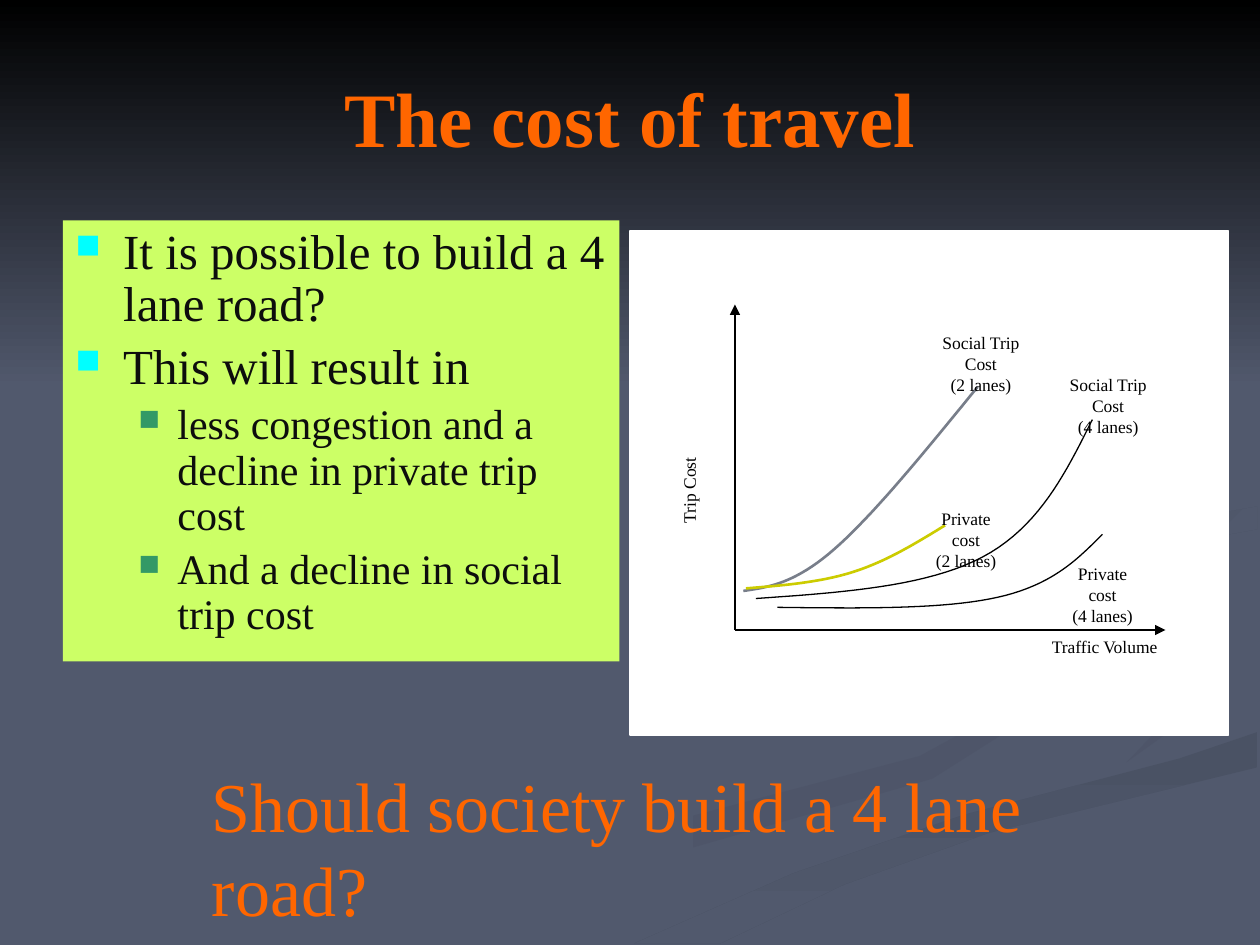
from lxml import etree
from pptx import Presentation
from pptx.dml.color import RGBColor
from pptx.enum.shapes import MSO_CONNECTOR, MSO_SHAPE
from pptx.enum.text import MSO_ANCHOR, PP_ALIGN
from pptx.oxml.ns import qn
from pptx.util import Inches, Pt

CENTER, LEFT = PP_ALIGN.CENTER, PP_ALIGN.LEFT
MIDDLE, TOP = MSO_ANCHOR.MIDDLE, MSO_ANCHOR.TOP
RECTANGLE, STRAIGHT = MSO_SHAPE.RECTANGLE, MSO_CONNECTOR.STRAIGHT
FONT = "Times New Roman"
COLORS = {name: RGBColor.from_string(value) for name, value in {
    "slate": "51596D", "dusk": "4E5569", "shade": "4A5264", "haze": "4D5467",
    "black": "000000", "white": "FFFFFF", "orange": "FF6600", "lime": "CCFF66",
    "ink": "0D0D0D", "cyan": "00FFFF", "green": "339966",
    "gray": "787E8A", "olive": "CCCC00"}.items()}

presentation = Presentation()
presentation.slide_width, presentation.slide_height = Inches(10), Inches(7.5)
COLUMN = presentation.slide_width / 10   # coarse grid of 10 by 7.5, for outlines
CELL = presentation.slide_width / 120    # fine grid of 120 by 90, for boxes
slide = presentation.slides.add_slide(presentation.slide_layouts[6])
slide.background.fill.solid()
slide.background.fill.fore_color.rgb = COLORS["slate"]


def add_outline(points, close):
    """Add a freeform through points given in coarse grid columns."""
    points = [(x * COLUMN, y * COLUMN) for x, y in points]
    builder = slide.shapes.build_freeform(*points[0])
    builder.add_line_segments(points[1:], close=close)
    shape = builder.convert_to_shape()
    shape.shadow.inherit = False
    return shape


def add_label(box, lines, size, color="black", align=LEFT, anchor=TOP, wrap=True):
    """Add a text box placed in fine grid cells, one paragraph per line."""
    shape = slide.shapes.add_textbox(*(round(n * CELL) for n in box))
    frame = shape.text_frame
    frame.word_wrap, frame.vertical_anchor = wrap, anchor
    frame.text = "\n".join(lines)
    for paragraph in frame.paragraphs:
        paragraph.alignment = align
        paragraph.font.name, paragraph.font.size = FONT, Pt(size)
        paragraph.font.color.rgb = COLORS[color]
    return shape


# Background: faint ribbons, then the dark band at the top
ribbons = [
    ("slate", "dusk", 0, [(7.8, 5.55), (7.85, 5.7), (7.3, 6), (5.4, 6.5), (3, 7.5),
                          (3.6, 7.5), (5, 6.87), (7.4, 6.18), (8, 5.8)]),
    ("slate", "dusk", 45, [(9.43, 5.7), (9.05, 5.4), (8.38, 5.36), (9.07, 5.62),
                           (9.18, 5.8), (8.94, 6.05)]),
    ("shade", "slate", 90, [(5.03, 7.49), (5.71, 7.49), (6.7, 7.02), (7.85, 6.61),
                            (9.98, 6.09), (9.98, 5.81), (9.36, 6.02), (7.64, 6.47),
                            (6.3, 6.93)]),
    ("haze", "slate", 45, [(7.81, 4.6), (7.9, 4.78), (8.26, 4.96), (8.05, 4.72),
                           (8.43, 4.48), (9.98, 4.2), (9.98, 4.02), (8.35, 4.3)]),
    ("black", "slate", 90, [(0, 0), (0, 3.08), (10, 3.08), (10, 0)]),
]
for start, end, angle, points in ribbons:
    ribbon = add_outline(points, True)
    ribbon.line.fill.background()
    ribbon.fill.gradient()
    ribbon.fill.gradient_angle = -angle % 360
    for stop, color in zip(ribbon.fill.gradient_stops, (start, end)):
        stop.color.rgb = COLORS[color]

title = add_label((6, 3.6, 108, 15), ["The cost of travel"], 44, "orange", CENTER, MIDDLE)
title.text_frame.paragraphs[0].font.bold = True

# Bulleted argument
bullets = [
    (0, "It is possible to build a 4 lane road?"),
    (0, "This will result in"),
    (1, "less congestion and a decline in private trip cost"),
    (1, "And a decline in social trip cost"),
]
levels = [(28, 0.38, 0.38, "cyan"), (24, 0.81, 0.31, "green")]
body = add_label((6, 21, 53, 42), [text for level, text in bullets], 28, "ink")
body.fill.solid()
body.fill.fore_color.rgb = COLORS["lime"]
for paragraph, (level, text) in zip(body.text_frame.paragraphs, bullets):
    size, margin, hanging, color = levels[level]
    paragraph.level = level
    paragraph.font.size = Pt(size)
    paragraph.line_spacing, paragraph.space_before = 0.9, Pt(size * 0.2)
    properties = paragraph._p.get_or_add_pPr()
    properties.set("marL", str(Inches(margin)))
    properties.set("indent", str(-Inches(hanging)))
    bullet_color = etree.Element(qn("a:buClr"))
    etree.SubElement(bullet_color, qn("a:srgbClr"), val=str(COLORS[color]))
    bullet_parts = [bullet_color, etree.Element(qn("a:buSzPct"), val="70000"),
                    etree.Element(qn("a:buChar"), char="■")]
    position = list(properties).index(properties.find(qn("a:defRPr")))
    properties[position:position] = bullet_parts

# Diagram panel and axes
panel = slide.shapes.add_shape(RECTANGLE, *(round(n * CELL) for n in (60, 22, 57, 48)))
panel.shadow.inherit = False
panel.fill.solid()
panel.fill.fore_color.rgb = panel.line.color.rgb = COLORS["white"]
panel.line.width = Pt(0.75)

for end_column, end_row in [(70, 29), (111, 60)]:
    axis = slide.shapes.add_connector(
        STRAIGHT, *(round(n * CELL) for n in (70, 60, end_column, end_row)))
    axis.line.color.rgb, axis.line.width = COLORS["black"], Pt(0.75)
    etree.SubElement(axis.line._get_or_add_ln(), qn("a:tailEnd"), type="triangle")
    etree.SubElement(axis._element.spPr, qn("a:effectLst"))

# Cost curves: a smooth Bezier pair through a start, a middle and an end point
curves = [
    ("gray", 1.5, [(5.9, 4.69), (6.62, 4.36), (7.76, 3.07)]),
    ("olive", 1.5, [(5.92, 4.67), (6.77, 4.54), (7.5, 4.17)]),
    ("black", 0.75, [(6, 4.75), (7.8, 4.42), (8.67, 3.33)]),
    ("black", 0.75, [(6.17, 4.82), (7.92, 4.74), (8.75, 4.24)]),
]
STEPS = 20
for color, width, (start, middle, end) in curves:
    tangent = [(b - a) / 6 for a, b in zip(start, end)]
    before = [m - d for m, d in zip(middle, tangent)]
    after = [m + d for m, d in zip(middle, tangent)]
    leaving = [(a + b) / 2 for a, b in zip(start, before)]
    arriving = [(a + b) / 2 for a, b in zip(after, end)]
    points = [start]
    for segment in ((start, leaving, before, middle), (middle, after, arriving, end)):
        for step in range(1, STEPS + 1):
            t = step / STEPS
            weights = ((1 - t) ** 3, 3 * t * (1 - t) ** 2, 3 * t * t * (1 - t), t ** 3)
            points.append([sum(weight * point[i] for weight, point in zip(weights, segment))
                           for i in (0, 1)])
    curve = add_outline(points, False)
    curve.fill.background()
    curve.line.color.rgb, curve.line.width = COLORS[color], Pt(width)

# Curve and axis labels
for left, top, width, cost, lanes in [
        (100, 53, 10, "Private cost", 4), (87, 31, 12.84, "Social Trip Cost", 2),
        (99.12, 35, 12.84, "Social Trip Cost", 4), (87, 47.76, 10, "Private cost", 2)]:
    add_label((left, top, width, 5.2), [cost, f"({lanes} lanes)"], 10, align=CENTER)
add_label((99, 60, 12.4, 3.2), ["Traffic Volume"], 10, wrap=False)
trip_cost = add_label((61.3, 45.1, 8.64, 3.2), ["Trip Cost"], 10, align=CENTER, wrap=False)
trip_cost.rotation = 270

add_label((19, 72, 92.4, 9.2), ["Should society build a 4 lane road?"], 40, "orange")

presentation.save("out.pptx")
